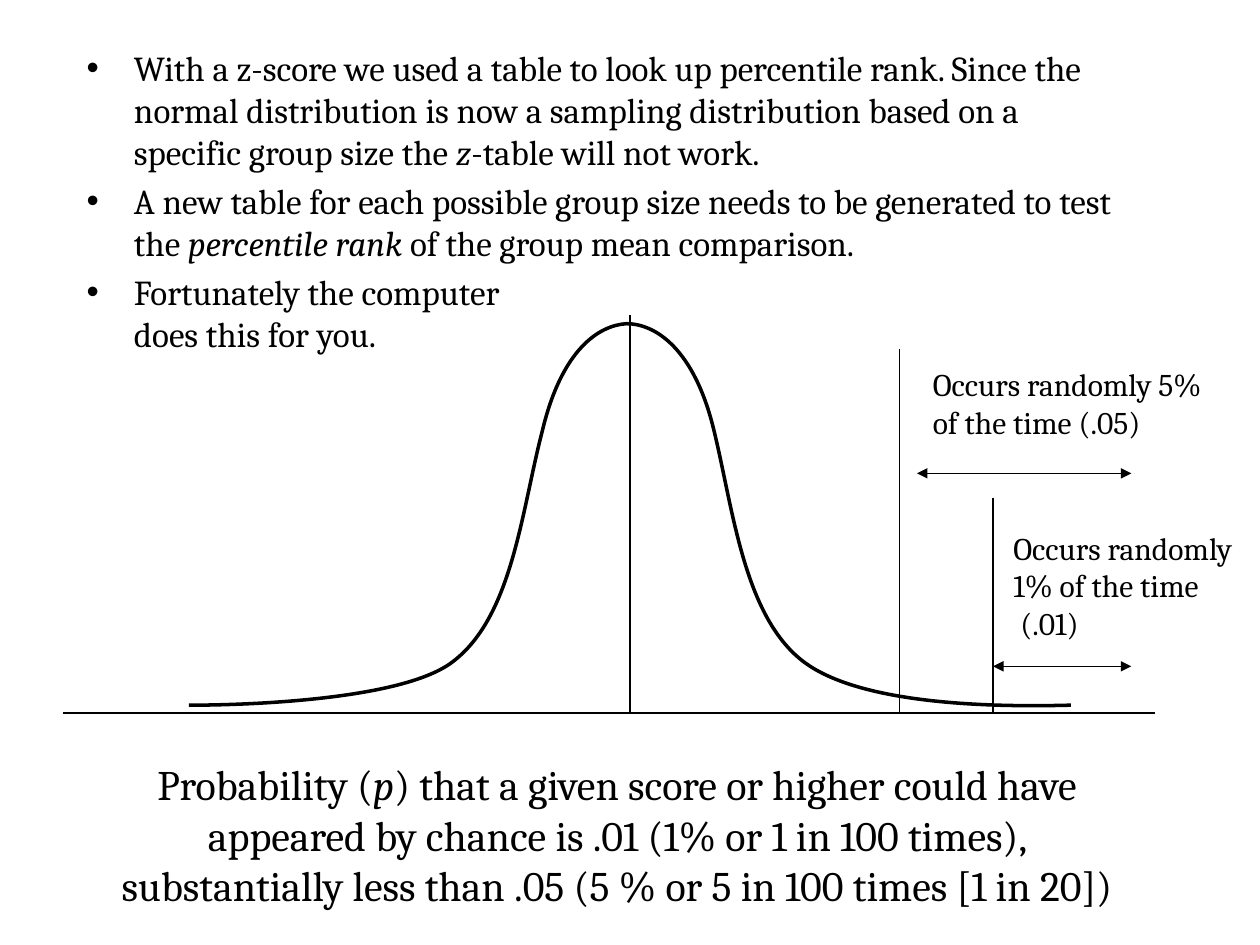
import pptx
import pptx.dml.color
import pptx.enum.shapes
import pptx.enum.text
import pptx.oxml
import pptx.oxml.ns
import pptx.util
from lxml import etree

Pt = pptx.util.Pt
qn = pptx.oxml.ns.qn
BLACK = pptx.dml.color.RGBColor(0, 0, 0)
FONT = "Cambria"

deck = pptx.Presentation()
deck.slide_width, deck.slide_height = Pt(720), Pt(540)
slide = deck.slides.add_slide(deck.slide_layouts[6])


def add_text(box, paragraphs, size, wrap=True):
    frame = slide.shapes.add_textbox(*map(Pt, box)).text_frame
    frame.word_wrap = wrap
    for index, runs in enumerate(paragraphs):
        paragraph = frame.paragraphs[0] if index == 0 else frame.add_paragraph()
        for text, italic in runs:
            for line_number, line in enumerate(text.split("\n")):
                if line_number:
                    paragraph.add_line_break()
                run = paragraph.add_run()
                run.text = line
                run.font.name = FONT
                run.font.size = Pt(size)
                run.font.italic = italic
                run.font.color.rgb = BLACK
    return frame


def add_line(x1, y1, x2, y2, arrows=False):
    line = slide.shapes.add_connector(
        pptx.enum.shapes.MSO_CONNECTOR.STRAIGHT, Pt(x1), Pt(y1), Pt(x2), Pt(y2))
    line.line.color.rgb = BLACK
    line.line.width = Pt(0.75)
    properties = line._element.spPr
    if arrows:
        for end in ("a:headEnd", "a:tailEnd"):
            etree.SubElement(properties.find(qn("a:ln")), qn(end), type="triangle")
    etree.SubElement(properties, qn("a:effectLst"))


BASELINE = 407.5
CUTOFF_5, CUTOFF_1, RANGE_END = 514, 567.5, 646.5
add_line(36, BASELINE, 660, BASELINE)
add_line(CUTOFF_1, 284.5, CUTOFF_1, BASELINE)
add_line(CUTOFF_1, 380.75, RANGE_END, 380.75, arrows=True)
add_line(CUTOFF_5, BASELINE, CUTOFF_5, 199.25)
add_line(524, 270.5, RANGE_END, 270.5, arrows=True)

add_text((60.5, 430, 589.5, 94.5), [[
    ("Probability (", False),
    ("p", True),
    (") that a given score or higher could have \n"
     "appeared by chance is .01 (1% or 1 in 100 times), \n"
     "substantially less than .05 (5 % or 5 in 100 times [1 in 20]) ", False),
]], 24, wrap=False).paragraphs[0].alignment = pptx.enum.text.PP_ALIGN.CENTER

bell_points = [
    (612, 402.75),
    (574.5, 404), (493, 404.5), (459, 378.25),
    (425, 352), (419, 291), (408, 245.5),
    (397, 200), (375, 185), (358.5, 185.25),
    (342, 185.5), (321, 200.5), (309.5, 246),
    (297.5, 291.5), (293, 352, ), (259, 378.25),
    (225.5, 404.5), (108, 403), (108, 403),
]
builder = slide.shapes.build_freeform(*bell_points[0], scale=Pt(1))
builder.add_line_segments(bell_points[1:], close=False)
bell = builder.convert_to_shape()
bell.fill.background()
bell.line.color.rgb = BLACK
bell.line.width = Pt(2)
bell.shadow.inherit = False
segments = list(bell._element.iter(qn("a:lnTo")))
for first in range(0, len(segments), 3):
    curve = etree.Element(qn("a:cubicBezTo"))
    segments[first].addprevious(curve)
    for segment in segments[first:first + 3]:
        curve.append(segment[0])
        segment.getparent().remove(segment)

add_line(360, 180, 360, 408)
add_text((526, 205.25, 172, 51),
         [[("Occurs randomly 5% of the time (.05)", False)]], 18)
add_text((572, 298.5, 139.5, 73),
         [[("Occurs randomly 1% of the time\n (.01)", False)]], 18)

explanation = add_text((42.5, 23, 612, 324), [
    [("With a z-score we used a table to look up percentile rank. Since the "
      "normal distribution is now a sampling distribution based on a specific "
      "group size the ", False),
     ("z", True),
     ("-table will not work.", False)],
    [("A new table for each possible group size needs to be generated to test the ", False),
     ("percentile rank ", True),
     ("of the group mean comparison.", False)],
    [("Fortunately the computer \ndoes this for you.", False)],
], 20)
for paragraph in explanation.paragraphs:
    paragraph.space_before = Pt(4)
    properties = paragraph._p.get_or_add_pPr()
    properties.set("marL", str(Pt(27)))
    properties.set("indent", str(-Pt(27)))
    etree.SubElement(properties, qn("a:buFont"), typeface="Arial")
    etree.SubElement(properties, qn("a:buChar"), char="•")

deck.save("out.pptx")
